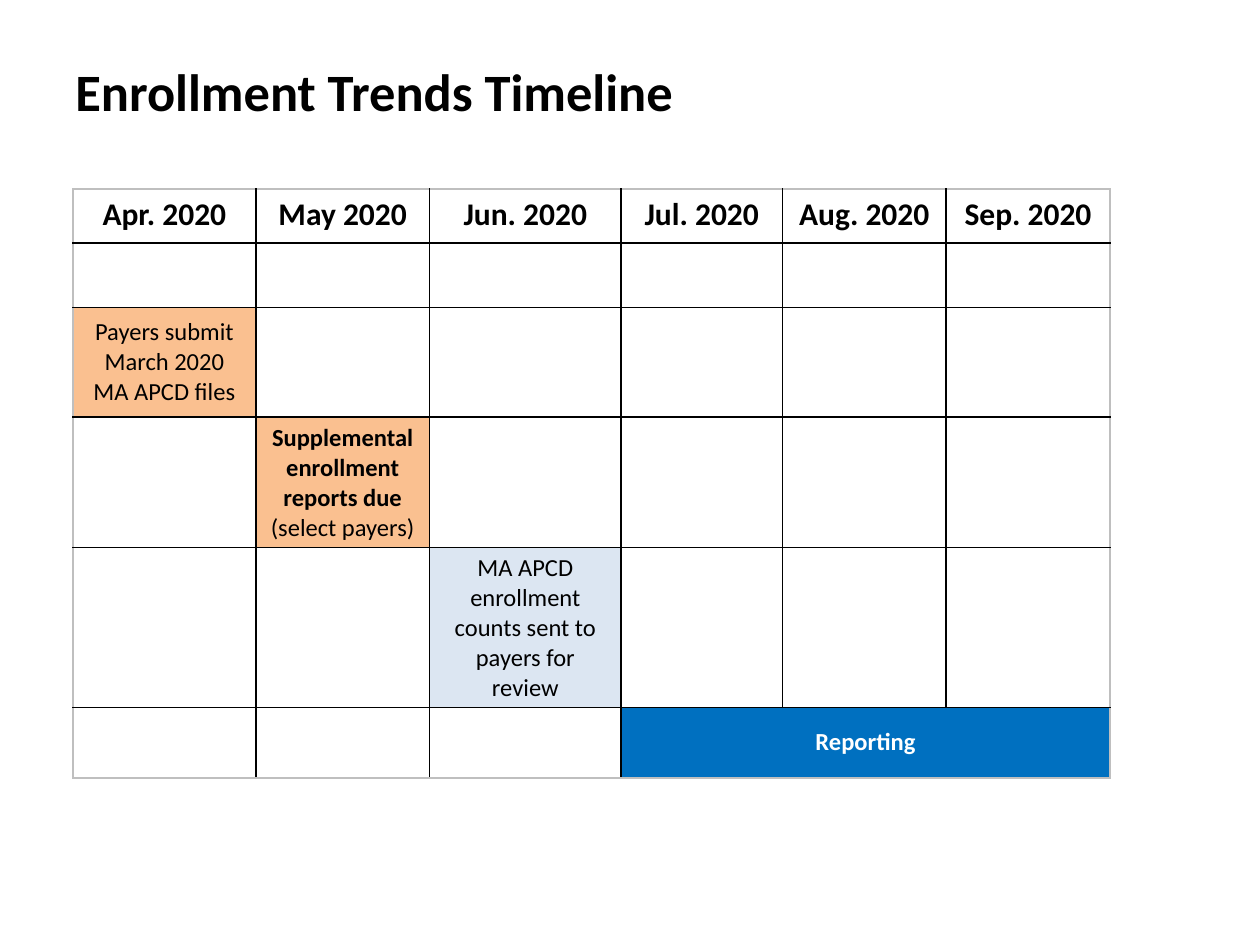
import pptx
import pptx.dml.color
import pptx.enum.text
import pptx.oxml
import pptx.oxml.ns
import pptx.util

Inches = pptx.util.Inches
MID = pptx.enum.text.MSO_ANCHOR.MIDDLE
TOP = pptx.enum.text.MSO_ANCHOR.TOP
CENTER = pptx.enum.text.PP_ALIGN.CENTER
BASE = {"name": "Calibri", "size": pptx.util.Pt(14), "bold": False}
HEAD = {"size": pptx.util.Pt(18), "bold": True}


def color(code):
    return pptx.dml.color.RGBColor.from_string(code)


def write(para, text, ink="000000", **look):
    run = para.add_run()
    run.text = text
    for key, value in {**BASE, **look}.items():
        setattr(run.font, key, value)
    run.font.color.rgb = color(ink)


deck = pptx.Presentation()
deck.slide_width, deck.slide_height = Inches(10), Inches(7.5)
slide = deck.slides.add_slide(deck.slide_layouts[6])

# Title
title = slide.shapes.add_textbox(Inches(0.5), Inches(0.42), Inches(8.5), Inches(0.61))
title.text_frame.word_wrap = True
write(title.text_frame.paragraphs[0], "Enrollment Trends Timeline",
      size=pptx.util.Pt(30), bold=True)

# Timeline grid
months = ["Apr.", "May", "Jun.", "Jul.", "Aug.", "Sep."]
widths = [1.45, 1.38, 1.52, 1.28, 1.3, 1.3]
heights = [0.43, 0.51, 0.87, 1.03, 1.27, 0.56]
frame = slide.shapes.add_table(len(heights), len(widths), Inches(0.58), Inches(1.5),
                               Inches(sum(widths)), Inches(sum(heights)))
grid = frame.table
grid.first_row = grid.horz_banding = False
for col, width in zip(grid.columns, widths):
    col.width = Inches(width)
for row, height in zip(grid.rows, heights):
    row.height = Inches(height)

# Steps: (row, column) -> fill and text runs
steps = {
    (2, 0): ("FAC090", [("Payers submit March 2020 MA APCD files", {})]),
    (3, 1): ("FAC090", [("Supplemental enrollment reports due ", {"bold": True}),
                        ("(select payers)", {})]),
    (4, 2): ("DCE6F2", [("MA APCD enrollment counts sent to payers for review", {})]),
    (5, 3): ("0070C0", [("Reporting", {"ink": "FFFFFF", "bold": True})]),
}
for c, month in enumerate(months):
    steps[0, c] = (None, [(f"{month} 2020", HEAD)])

# Reporting runs through the last three months
grid.cell(5, 3).merge(grid.cell(5, 5))

# Cells: grey outer edge, black inner lines
last_row, last_col = len(heights) - 1, len(widths) - 1
for r in range(last_row + 1):
    for c in range(last_col + 1):
        cell = grid.cell(r, c)
        outer = {"L": c == 0, "R": c == last_col or (r, c) == (5, 3),
                 "T": r == 0, "B": r == last_row}
        props = cell._tc.get_or_add_tcPr()
        for side, edge in outer.items():
            ink = "BFBFBF" if edge else "000000"
            props.append(pptx.oxml.parse_xml(
                f'<a:ln{side} {pptx.oxml.ns.nsdecls("a")} w="12700"><a:solidFill>'
                f'<a:srgbClr val="{ink}"/></a:solidFill></a:ln{side}>'))
        fill, runs = steps.get((r, c), (None, []))
        if fill:
            cell.fill.solid()
            cell.fill.fore_color.rgb = color(fill)
        else:
            cell.fill.background()
        cell.vertical_anchor = MID if r else TOP
        para = cell.text_frame.paragraphs[0]
        para.alignment = CENTER
        for text, look in runs:
            write(para, text, **look)

deck.save("out.pptx")
